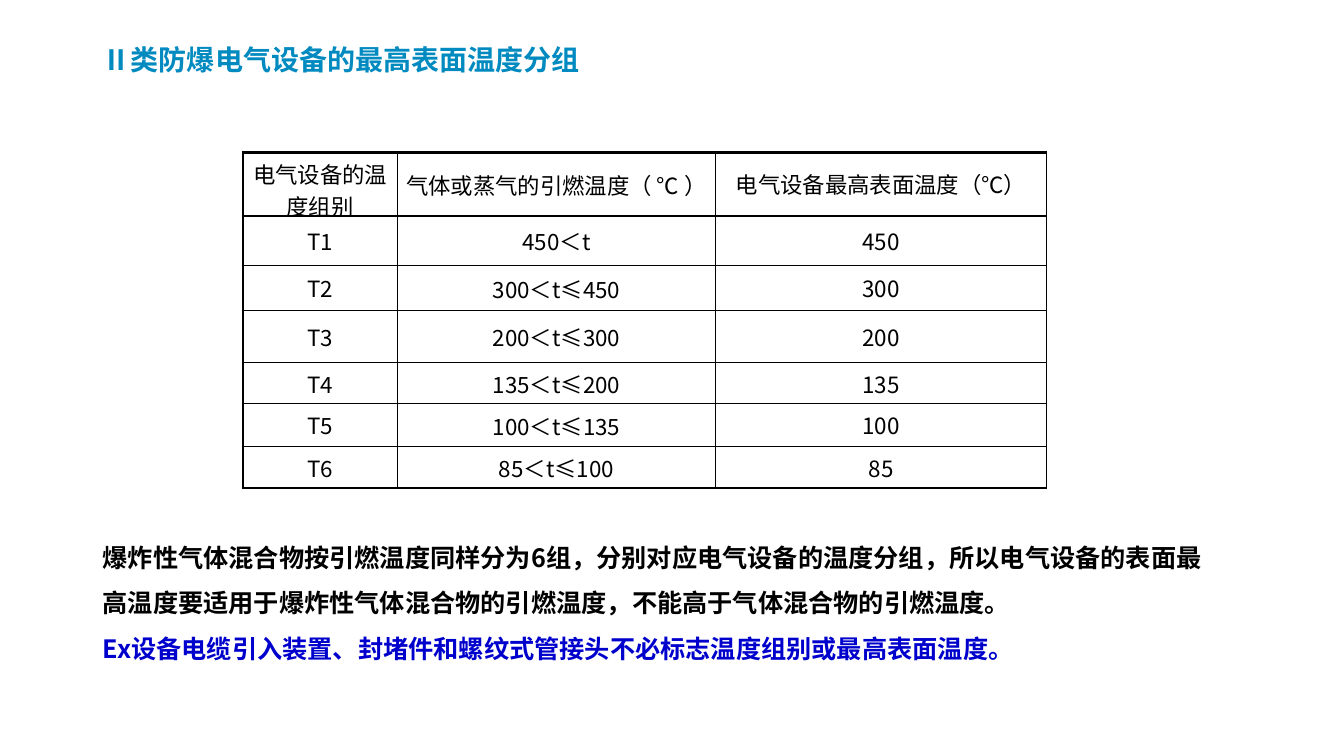
from lxml.etree import SubElement
from pptx import Presentation
from pptx.dml.color import RGBColor
from pptx.enum.text import MSO_ANCHOR, MSO_AUTO_SIZE, PP_ALIGN
from pptx.oxml.ns import qn
from pptx.util import Inches, Pt

FONT = "Noto Sans CJK SC"


def format_paragraph(paragraph, size, color, bold=False):
    for run in paragraph.runs:
        run.font.size = Pt(size)
        run.font.bold = bold
        run.font.color.rgb = RGBColor.from_string(color)
        run.font.name = FONT
        SubElement(run.font._element, qn("a:ea"), typeface=FONT)


def add_border(cell, side, width):
    line = SubElement(cell._tc.get_or_add_tcPr(), qn(f"a:{side}"), w=str(Pt(width)))
    fill = SubElement(line, qn("a:solidFill"))
    SubElement(fill, qn("a:srgbClr"), val="000000")


presentation = Presentation()
presentation.slide_width = Inches(13.33)
presentation.slide_height = Inches(7.5)
slide = presentation.slides.add_slide(presentation.slide_layouts[5])

# Title
title = slide.shapes.title
title.left, title.top = Inches(0.92), Inches(0.36)
title.width, title.height = Inches(6.48), Inches(0.45)
title_frame = title.text_frame
title_frame.text = "Ⅱ类防爆电气设备的最高表面温度分组"
title_frame.auto_size = MSO_AUTO_SIZE.NONE
title_frame.vertical_anchor = MSO_ANCHOR.MIDDLE
title_frame.margin_bottom = 0
title_paragraph = title_frame.paragraphs[0]
title_paragraph.alignment = PP_ALIGN.LEFT
title_paragraph.line_spacing = 0.9
format_paragraph(title_paragraph, 20, "008AC0", bold=True)

# Explanation below the table
notes = [
    ("爆炸性气体混合物按引燃温度同样分为6组，分别对应电气设备的温度分组，所以电气设备的表面最高温度要适用于爆炸性气体混合物的引燃温度，不能高于气体混合物的引燃温度。", "000000"),
    ("Ex设备电缆引入装置、封堵件和螺纹式管接头不必标志温度组别或最高表面温度。", "0000CC"),
]
explanation = slide.shapes.add_textbox(Inches(0.92), Inches(5.18), Inches(11.28), Inches(1.46))
explanation_frame = explanation.text_frame
explanation_frame.word_wrap = True
explanation_frame.text = "\n".join(text for text, color in notes)
for paragraph, (text, color) in zip(explanation_frame.paragraphs, notes):
    paragraph.line_spacing = 1.5
    format_paragraph(paragraph, 18, color, bold=True)

# Temperature class table
rows = [
    ("电气设备的温度组别", "气体或蒸气的引燃温度（ ℃ ）", "电气设备最高表面温度（℃）"),
    ("T1", "450＜t", "450"),
    ("T2", "300＜t≤450", "300"),
    ("T3", "200＜t≤300", "200"),
    ("T4", "135＜t≤200", "135"),
    ("T5", "100＜t≤135", "100"),
    ("T6", "85＜t≤100", "85"),
]
column_widths = [1.53, 3.16, 3.28]
row_heights = [0.63, 0.49, 0.45, 0.51, 0.41, 0.43, 0.41]
table = slide.shapes.add_table(
    len(rows), len(column_widths), Inches(2.41), Inches(1.51),
    Inches(sum(column_widths)), Inches(sum(row_heights))).table
table.first_row = False
table.horz_banding = False
for column, width in zip(table.columns, column_widths):
    column.width = Inches(width)

for row_index, (values, height) in enumerate(zip(rows, row_heights)):
    table.rows[row_index].height = Inches(height)
    for column_index, value in enumerate(values):
        cell = table.cell(row_index, column_index)
        cell.text = value
        cell.vertical_anchor = MSO_ANCHOR.MIDDLE
        middle = column_index == 1
        cell.margin_left = cell.margin_right = Inches(0.01 if middle else 0)
        cell.margin_top = Inches(0.01 if middle else 0.05)
        cell.margin_bottom = Inches(0 if middle else 0.05)
        paragraph = cell.text_frame.paragraphs[0]
        paragraph.alignment = PP_ALIGN.CENTER
        format_paragraph(paragraph, 16, "000000")
        # Thick outer edges on the left, top and bottom
        add_border(cell, "lnL", 2.25 if column_index == 0 else 1)
        add_border(cell, "lnR", 1)
        add_border(cell, "lnT", 2.25 if row_index == 0 else 1)
        add_border(cell, "lnB", 2.25 if row_index == len(rows) - 1 else 1)
        cell.fill.background()

presentation.save("out.pptx")
